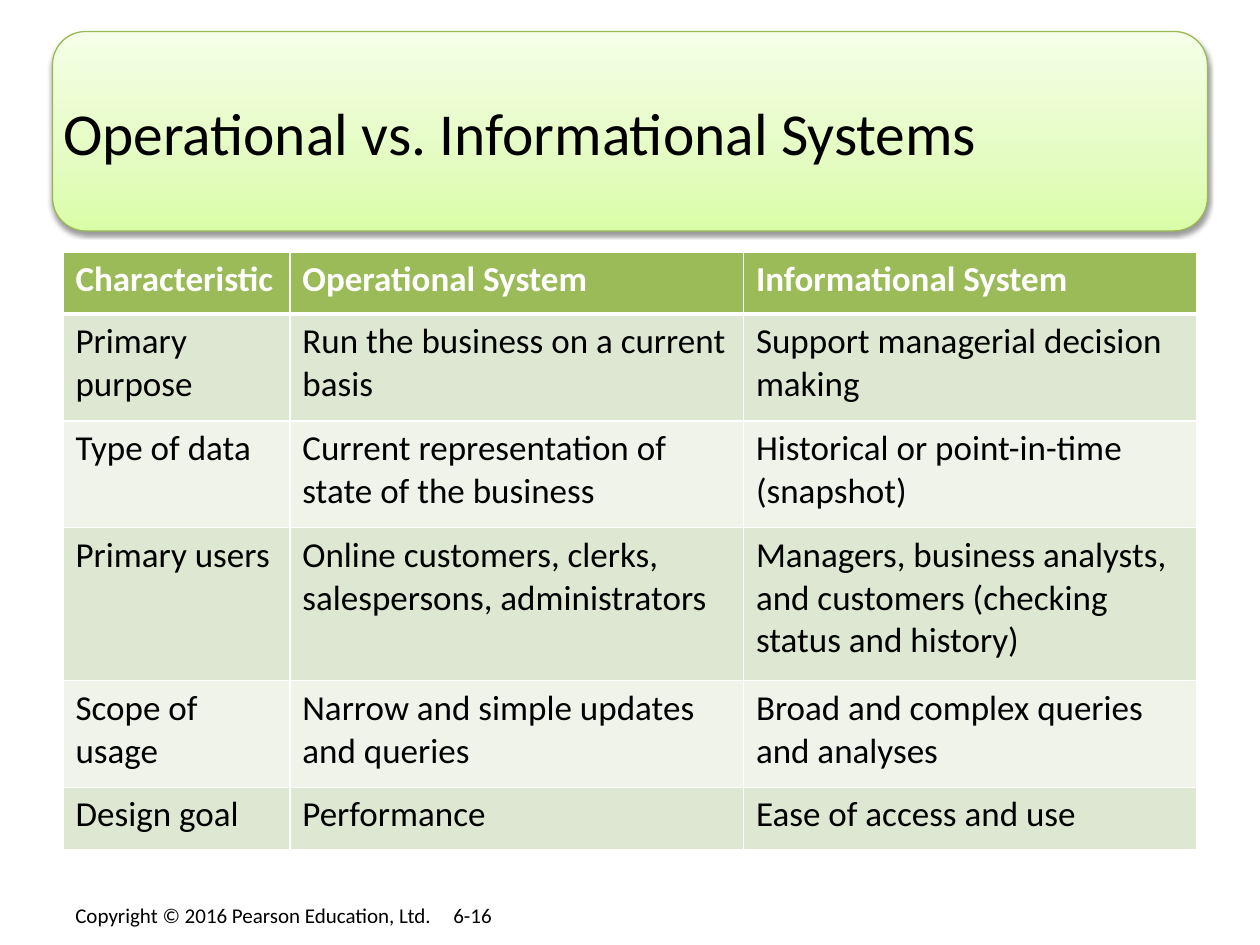
from pptx import Presentation
from pptx.dml.color import RGBColor
from pptx.enum.shapes import MSO_SHAPE
from pptx.enum.text import MSO_ANCHOR, MSO_AUTO_SIZE, PP_ALIGN
from pptx.oxml import parse_xml
from pptx.oxml.ns import nsdecls
from pptx.util import Pt

ROUNDED = MSO_SHAPE.ROUNDED_RECTANGLE
MIDDLE = MSO_ANCHOR.MIDDLE
FIT_SHAPE = MSO_AUTO_SIZE.SHAPE_TO_FIT_TEXT
LEFT = PP_ALIGN.LEFT
NS = nsdecls("a")

ROWS = [
    ["Characteristic", "Operational System", "Informational System"],
    ["Primary purpose", "Run the business on a current basis",
     "Support managerial decision making"],
    ["Type of data", "Current representation of state of the business",
     "Historical or point-in-time\n(snapshot)"],
    ["Primary users", "Online customers, clerks, salespersons, administrators",
     "Managers, business analysts, and customers (checking status and history)"],
    ["Scope of usage", "Narrow and simple updates and queries",
     "Broad and complex queries and analyses"],
    ["Design goal", "Performance", "Ease of access and use"],
]
COL_WIDTHS = [129.6, 259.2, 259.2]
ROW_HEIGHTS = [35.5, 61, 61, 87.5, 61, 35.5]


def rgb(hex_color):
    return RGBColor.from_string(hex_color)


class SlideBuilder:
    font = "Calibri"
    text = "000000"
    white = "FFFFFF"
    header = "9BBB59"
    bands = ["EFF3EA", "DEE7D1"]
    panel_line = "98B955"
    panel_stops = [(0, "DAFDA7"), (35, "E4FCC2"), (100, "F5FFE7")]

    def __init__(self, s):
        self.s = s

    def style(self, tf, size, color=None, bold=False):
        for p in tf.paragraphs:
            for r in p.runs:
                r.font.name = self.font
                r.font.size = Pt(size)
                r.font.bold = bold
                r.font.color.rgb = rgb(color or self.text)

    def panel(self, x, y, w, h):
        sp = self.s.shapes.add_shape(ROUNDED, Pt(x), Pt(y), Pt(w), Pt(h))
        sp.line.color.rgb = rgb(self.panel_line)
        sp.line.width = Pt(0.75)
        # Three-stop gradient, rising from the bottom
        stops = "".join(
            f'<a:gs pos="{pos * 1000}"><a:srgbClr val="{color}"/></a:gs>'
            for pos, color in self.panel_stops)
        sp.fill.background()
        no_fill = sp.element.spPr.find("{*}noFill")
        sp.element.spPr.replace(no_fill, parse_xml(
            f'<a:gradFill {NS} rotWithShape="1"><a:gsLst>{stops}</a:gsLst>'
            '<a:lin ang="16200000" scaled="0"/></a:gradFill>'))
        # Soft shadow below
        sp.shadow.inherit = False
        sp.element.spPr.find("{*}effectLst").append(parse_xml(
            f'<a:outerShdw {NS} blurRad="{Pt(3.1)}" dist="{Pt(1.6)}" '
            'dir="5400000" rotWithShape="0"><a:srgbClr val="000000">'
            '<a:alpha val="38000"/></a:srgbClr></a:outerShdw>'))
        return sp

    def title(self, text, x, y, w, h, behind):
        sp = self.s.shapes.title
        sp.left, sp.top, sp.width, sp.height = Pt(x), Pt(y), Pt(w), Pt(h)
        behind.element.addnext(sp.element)
        tf = sp.text_frame
        tf.text = text
        tf.vertical_anchor = MIDDLE
        tf.margin_left = tf.margin_right = tf.margin_top = tf.margin_bottom = 0
        tf.paragraphs[0].alignment = LEFT
        self.style(tf, 34)

    def footer(self, text, x, y, w, h, tab):
        sp = self.s.shapes.add_textbox(Pt(x), Pt(y), Pt(w), Pt(h))
        tf = sp.text_frame
        tf.word_wrap = True
        tf.auto_size = FIT_SHAPE
        p = tf.paragraphs[0]
        p.text = text
        p.alignment = LEFT
        p._p.get_or_add_pPr().append(parse_xml(
            f'<a:tabLst {NS}><a:tab pos="{Pt(tab)}" algn="l"/></a:tabLst>'))
        self.style(tf, 12)

    def borders(self, cell, top, bottom):
        widths = {"lnL": 1, "lnR": 1, "lnT": top, "lnB": bottom}
        tc_pr = cell._tc.get_or_add_tcPr()
        for i, (tag, width) in enumerate(widths.items()):
            tc_pr.insert(i, parse_xml(
                f'<a:{tag} {NS} w="{Pt(width)}"><a:solidFill>'
                f'<a:srgbClr val="{self.white}"/></a:solidFill></a:{tag}>'))

    def table(self, rows, x, y, col_widths, row_heights):
        table = self.s.shapes.add_table(
            len(rows), len(col_widths), Pt(x), Pt(y),
            Pt(sum(col_widths)), Pt(sum(row_heights))).table
        for column, width in zip(table.columns, col_widths):
            column.width = Pt(width)
        for i, (texts, height) in enumerate(zip(rows, row_heights)):
            table.rows[i].height = Pt(height)
            is_header = i == 0
            for j, text in enumerate(texts):
                cell = table.cell(i, j)
                cell.text_frame.text = text
                self.style(cell.text_frame, 20,
                           self.white if is_header else self.text, is_header)
                cell.fill.solid()
                cell.fill.fore_color.rgb = rgb(
                    self.header if is_header else self.bands[i % 2])
                self.borders(cell, 3 if i == 1 else 1, 3 if is_header else 1)


def main():
    prs = Presentation()
    prs.slide_width, prs.slide_height = Pt(720), Pt(540)
    b = SlideBuilder(prs.slides.add_slide(prs.slide_layouts[5]))

    # Footer
    b.footer("Copyright © 2016 Pearson Education, Ltd. \t6-16",
             36, 512, 648, 21.6, tab=216)

    # Title on its panel
    panel = b.panel(30, 18, 660, 114)
    b.title("Operational vs. Informational Systems", 36, 24, 648, 102, panel)

    # Comparison table
    b.table(ROWS, 36, 144, COL_WIDTHS, ROW_HEIGHTS)

    prs.save("out.pptx")


if __name__ == "__main__":
    main()
